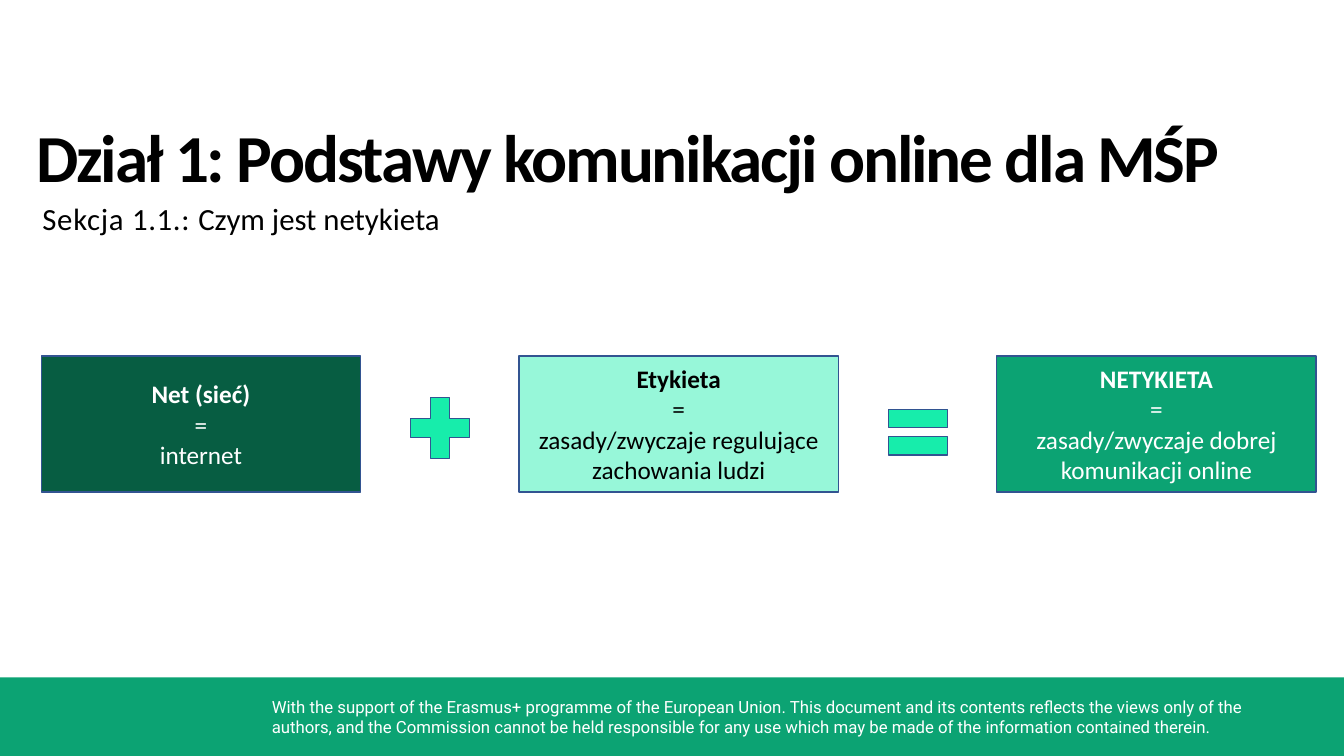
from pptx import Presentation
from pptx.dml.color import RGBColor
from pptx.enum.shapes import MSO_SHAPE
from pptx.enum.text import MSO_ANCHOR, MSO_AUTO_SIZE, PP_ALIGN
from pptx.util import Cm, Pt

TITLE = [("Dział 1: Podstawy komunikacji online dla MŚP", -1.5)]
SECTION = [("Sekcja 1.1.: ", 0.5), ("Czym jest netykieta", 0)]
# fill, text colour, lines
TERMS = [
    ("075D42", "FFFFFF", ["Net (sieć)", "=", "internet"]),
    ("97F7D9", "000000", ["Etykieta", "=", "zasady/zwyczaje regulujące zachowania ludzi"]),
    ("0CA373", "FFFFFF", ["NETYKIETA", "=", "zasady/zwyczaje dobrej komunikacji online"]),
]
# preset, top, height in cm
SYMBOLS = [
    (MSO_SHAPE.MATH_PLUS, 9.75, 2.08),
    (MSO_SHAPE.MATH_EQUAL, 9.91, 1.96),
]
DISCLAIMER = (
    "With the support of the Erasmus+ programme of the European Union. "
    "This document and its contents reflects the views only of the authors, "
    "and the Commission cannot be held responsible for any use which may be made "
    "of the information contained therein."
)
GREEN, MINT, OUTLINE = "0CA373", "17EDAB", "325491"
SLIDE_WIDTH, SLIDE_HEIGHT = 33.87, 19.05
FOOTER_TOP = 17.07
BOX_LEFT, BOX_TOP, BOX_WIDTH, BOX_HEIGHT = 1.04, 8.97, 8.05, 3.43
BOX_STEP = 12.04
SYMBOL_OFFSET, SYMBOL_WIDTH = 9.04, 2.03


def color(value):
    return RGBColor.from_string(value)


def set_font(paragraph, size, value, bold=False, name="Calibri"):
    font = paragraph.font
    font.name, font.size, font.bold = name, Pt(size), bold
    font.color.rgb = color(value)


def add_shape(slide, preset, left, top, width, height, fill, line=None):
    shape = slide.shapes.add_shape(preset, Cm(left), Cm(top), Cm(width), Cm(height))
    shape.shadow.inherit = False
    shape.fill.solid()
    shape.fill.fore_color.rgb = color(fill)
    if line:
        shape.line.color.rgb = color(line)
        shape.line.width = Pt(1)
    else:
        shape.line.fill.background()
    return shape


def fill_heading(placeholder, box, runs, size, bold, inset_top):
    """Place a heading and write its (text, letter spacing in points) runs."""
    placeholder.left, placeholder.top, placeholder.width, placeholder.height = map(Cm, box)
    frame = placeholder.text_frame
    frame.auto_size = MSO_AUTO_SIZE.NONE
    frame.word_wrap = True
    frame.vertical_anchor = MSO_ANCHOR.TOP
    frame.margin_left = frame.margin_right = frame.margin_bottom = 0
    frame.margin_top = Cm(inset_top)
    paragraph = frame.paragraphs[0]
    paragraph.alignment = PP_ALIGN.LEFT
    paragraph.space_before = Pt(0)
    set_font(paragraph, size, "000000", bold)
    for text, spacing in runs:
        run = paragraph.add_run()
        run.text = text
        run.font._element.set("spc", str(round(spacing * 100)))


def add_term(slide, left, fill, text_color, lines):
    box = add_shape(slide, MSO_SHAPE.RECTANGLE, left, BOX_TOP, BOX_WIDTH, BOX_HEIGHT,
                    fill, OUTLINE)
    frame = box.text_frame
    frame.word_wrap = True
    frame.vertical_anchor = MSO_ANCHOR.MIDDLE
    frame.text = "\n".join(lines)
    for index, paragraph in enumerate(frame.paragraphs):
        paragraph.alignment = PP_ALIGN.CENTER
        set_font(paragraph, 18, text_color, bold=index == 0)


def add_footer(slide):
    add_shape(slide, MSO_SHAPE.RECTANGLE, 0, FOOTER_TOP, SLIDE_WIDTH,
              SLIDE_HEIGHT - FOOTER_TOP, GREEN)
    note = slide.shapes.add_textbox(Cm(6.6), Cm(17.42), Cm(26.47), Cm(1.27))
    frame = note.text_frame
    frame.word_wrap = True
    frame.text = DISCLAIMER
    set_font(frame.paragraphs[0], 12, "FFFFFF", name="Roboto")


def main():
    presentation = Presentation()
    presentation.slide_width, presentation.slide_height = Cm(SLIDE_WIDTH), Cm(SLIDE_HEIGHT)
    slide = presentation.slides.add_slide(presentation.slide_layouts[0])
    add_footer(slide)
    title, section = slide.placeholders
    fill_heading(title, (0.91, 2.84, 31.24, 2.08), TITLE, 48, True, 0.06)
    fill_heading(section, (1.07, 4.93, 11.94, 1.7), SECTION, 22, False, 0.09)
    for index, term in enumerate(TERMS):
        add_term(slide, BOX_LEFT + index * BOX_STEP, *term)
    for index, (preset, top, height) in enumerate(SYMBOLS):
        left = BOX_LEFT + index * BOX_STEP + SYMBOL_OFFSET
        add_shape(slide, preset, left, top, SYMBOL_WIDTH, height, MINT, OUTLINE)
    presentation.save("out.pptx")


if __name__ == "__main__":
    main()
